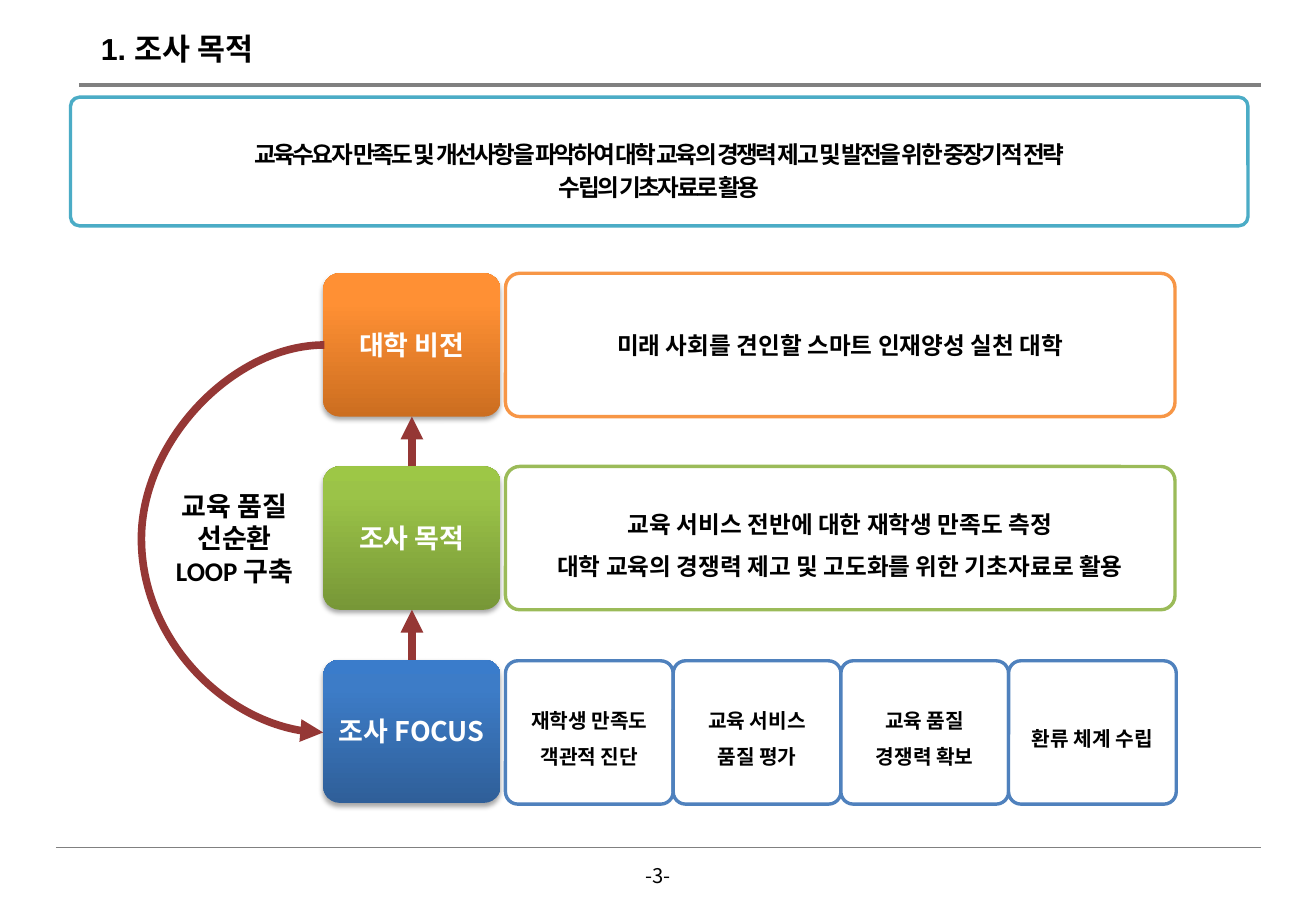
from lxml import etree
from pptx import Presentation
from pptx.dml.color import RGBColor
from pptx.enum.shapes import MSO_CONNECTOR, MSO_SHAPE
from pptx.enum.text import MSO_ANCHOR, PP_ALIGN
from pptx.oxml import parse_xml
from pptx.oxml.ns import nsdecls, qn
from pptx.util import Inches, Pt

ROUND = MSO_SHAPE.ROUNDED_RECTANGLE
LINE, CURVE = MSO_CONNECTOR.STRAIGHT, MSO_CONNECTOR.CURVE
MID, TOP = MSO_ANCHOR.MIDDLE, MSO_ANCHOR.TOP
MIDDLE, LEFT = PP_ALIGN.CENTER, PP_ALIGN.LEFT
NOTO, ARIAL, CALIBRI = "Noto Sans CJK KR", "Arial", "Calibri"
COLORS = {
    "black": "000000", "white": "FFFFFF", "gray": "808080", "teal": "4BACC6",
    "orange": "F79646", "green": "9BBB59", "blue": "4F81BD", "red": "953735",
}
FADES = {
    "orange": ("CC6E20", "FF9034", "FF9136"),
    "green": ("779737", "9BC348", "9DC746"),
    "blue": ("2F5F99", "3D7CC7", "3A7CCB"),
}


def color(name):
    return RGBColor.from_string(COLORS[name])


class Page:
    """Holds the style and the current slide, and draws each kind of element."""

    def __init__(self, deck):
        self.slide = deck.slides.add_slide(deck.slide_layouts[5])
        self.shapes = self.slide.shapes

    def label(self, shape, lines, size, font=NOTO, ink="black", bold=True,
              align=MIDDLE, anchor=MID, inset=0.04, gap=None, after=0, track=0):
        frame = shape.text_frame
        frame.word_wrap = True
        frame.vertical_anchor = anchor
        frame.margin_left = frame.margin_right = Inches(inset)
        frame.margin_top = frame.margin_bottom = Inches(min(inset, 0.05))
        frame.text = "\n".join(lines)
        for para in frame.paragraphs:
            para.alignment = align
            para.space_after = Pt(after)
            if gap:
                para.line_spacing = gap
            for run in para.runs:
                run.font.name, run.font.size, run.font.bold = font, Pt(size), bold
                run.font.color.rgb = color(ink)
                if track:
                    run.font._element.set("spc", str(track))
        return frame

    def title(self, text):
        shape = self.shapes.title
        shape.left, shape.top = Inches(0.73), Inches(0.2)
        shape.width, shape.height = Inches(1.6), Inches(0.4)
        frame = self.label(shape, [text], 18, ARIAL, align=LEFT, inset=0.1)
        frame.word_wrap = False

    def text(self, x, y, w, h, lines, size, **style):
        box = self.shapes.add_textbox(Inches(x), Inches(y), Inches(w), Inches(h))
        return self.label(box, lines, size, anchor=TOP, inset=0.1, **style)

    def round(self, x, y, w, h, bend):
        shape = self.shapes.add_shape(ROUND, Inches(x), Inches(y), Inches(w), Inches(h))
        shape.adjustments[0] = bend
        shape.shadow.inherit = False
        return shape

    def card(self, x, y, w, h, edge, lines, size, bend=0.1, **style):
        shape = self.round(x, y, w, h, bend)
        shape.fill.solid()
        shape.fill.fore_color.rgb = color("white")
        shape.line.color.rgb = color(edge)
        shape.line.width = Pt(2)
        return self.label(shape, lines, size, **style)

    def badge(self, x, y, w, h, fade, text):
        shape = self.round(x, y, w, h, 0.115)
        shape.line.fill.background()
        stops = "".join(
            f'<a:gs pos="{spot}"><a:srgbClr val="{tone}"/></a:gs>'
            for spot, tone in zip((0, 80000, 100000), FADES[fade]))
        props = shape._element.spPr
        props.find(qn("a:prstGeom")).addnext(parse_xml(
            f'<a:gradFill {nsdecls("a")} rotWithShape="1"><a:gsLst>{stops}</a:gsLst>'
            '<a:lin ang="16200000" scaled="0"/></a:gradFill>'))
        props.find(qn("a:effectLst")).append(parse_xml(
            f'<a:outerShdw {nsdecls("a")} blurRad="{Pt(3.1)}" dist="{Pt(1.8)}" '
            'dir="5400000" rotWithShape="0"><a:srgbClr val="000000">'
            '<a:alpha val="35000"/></a:srgbClr></a:outerShdw>'))
        self.label(shape, [text], 16, ink="white")

    def line(self, x, y, right, low, ink, width, kind=LINE, head=False):
        link = self.shapes.add_connector(
            kind, Inches(x), Inches(y), Inches(right), Inches(low))
        link.line.color.rgb = color(ink)
        link.line.width = Pt(width)
        if head:
            etree.SubElement(link.line._ln, qn("a:tailEnd"), type="triangle")
        etree.SubElement(link._element.spPr, qn("a:effectLst"))
        return link

    def loop(self, x, y, right, low, reach):
        link = self.line(x, y, right, low, "red", 4.5, CURVE, True)
        bends = link._element.spPr.find(qn("a:prstGeom")).get_or_add_avLst()
        ratio = round(reach / (x - right) * 100000)
        etree.SubElement(bends, qn("a:gd"), name="adj1", fmla=f"val {ratio}")


def main():
    deck = Presentation()
    deck.slide_width, deck.slide_height = Inches(10.83), Inches(7.5)
    page = Page(deck)
    page.line(0.65, 0.7, 10.38, 0.7, "gray", 2)
    page.line(0.46, 6.98, 10.38, 6.98, "gray", 0.5)
    page.title("1. 조사 목적")
    page.text(5.14, 7.06, 0.55, 0.3, ["-3-"], 12, bold=False)

    goal = page.card(
        0.58, 0.8, 9.69, 1.06, "teal",
        ["교육수요자 만족도 및 개선사항을 파악하여 대학 교육의 경쟁력 제고 및 발전을 위한 중장기적 전략",
         "수립의 기초자료로 활용"],
        14, 0.071, font=ARIAL, anchor=TOP, inset=0.1, after=3, track=-150)
    goal.margin_top = Inches(0.33)

    tall, step, top = 1.18, 1.59, 2.25
    rows = [("orange", "대학 비전"), ("green", "조사 목적"), ("blue", "조사 FOCUS")]
    for i, (tone, name) in enumerate(rows):
        page.badge(2.66, top + i * step, 1.46, tall, tone, name)

    page.card(4.16, top, 5.51, tall, "orange",
              ["미래 사회를 견인할 스마트 인재양성 실천 대학"], 14)
    page.card(4.16, top + step, 5.51, tall, "green",
              ["교육 서비스 전반에 대한 재학생 만족도 측정",
               "대학 교육의 경쟁력 제고 및 고도화를 위한 기초자료로 활용"], 14, gap=1.5)
    focus = [["재학생 만족도 객관적 진단"], ["교육 서비스", "품질 평가"],
             ["교육 품질", "경쟁력 확보"], ["환류 체계 수립"]]
    for i, lines in enumerate(focus):
        page.card(4.16 + i * 1.38, 5.44, 1.38, tall, "blue", lines, 12, 0.086, gap=1.5)

    for i in (2, 1):
        low = top + i * step
        page.line(3.39, low, 3.39, low - step + tall, "red", 4.5, head=True)
    page.loop(2.67, 2.84, 2.66, 6.03, 1.53)
    page.text(1.32, 3.98, 1.22, 0.91, ["교육 품질", "선순환", "LOOP 구축"], 16, font=CALIBRI)
    deck.save("out.pptx")


if __name__ == "__main__":
    main()
